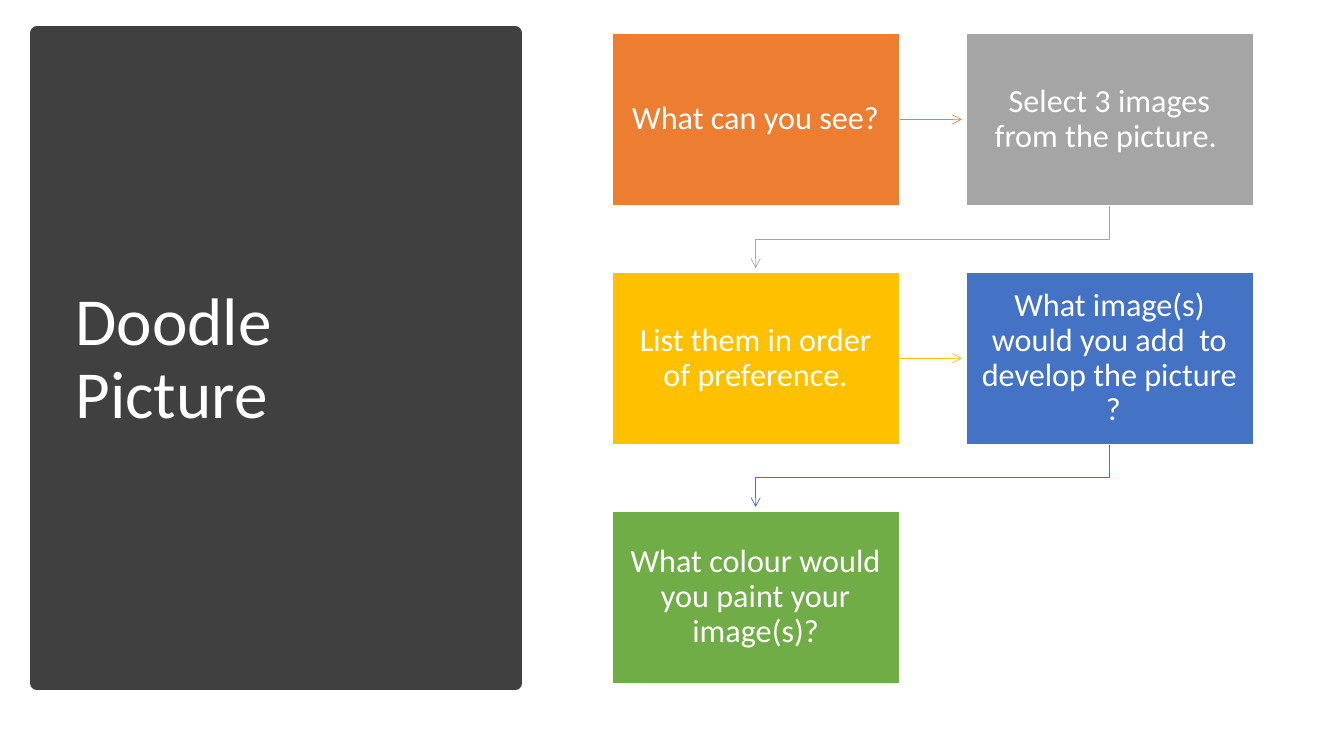
from lxml import etree
from pptx import Presentation
from pptx.dml.color import RGBColor
from pptx.enum import shapes, text
from pptx.oxml.ns import qn
from pptx.util import Inches, Pt

WHITE = RGBColor(0xFF, 0xFF, 0xFF)
DARK = RGBColor(0x40, 0x40, 0x40)
ORANGE = RGBColor(0xED, 0x7D, 0x31)
GREY = RGBColor(0xA5, 0xA5, 0xA5)
GOLD = RGBColor(0xFF, 0xC0, 0x00)
BLUE = RGBColor(0x44, 0x72, 0xC4)
GREEN = RGBColor(0x70, 0xAD, 0x47)

LEFT, TOP = 6.07, 0.33
WIDE, HIGH = 2.85, 1.71
STEP_X, STEP_Y = 3.51, 2.37
REACH = 0.62

STEPS = [
    ("What can you see?", ORANGE),
    ("Select 3 images from the picture. ", GREY),
    ("List them in order of preference.", GOLD),
    ("What image(s) would you add  to develop the picture  ?", BLUE),
    ("What colour would you paint your image(s)?", GREEN),
]


class Deck:
    font = "Calibri"

    def __init__(self):
        self.show = Presentation()
        self.show.slide_width = Inches(13.33)
        self.show.slide_height = Inches(7.5)
        self.slide = self.show.slides.add_slide(self.show.slide_layouts[6])
        self.items = self.slide.shapes

    def label(self, shape, words, size, align, insets):
        frame = shape.text_frame
        frame.word_wrap = True
        frame.vertical_anchor = text.MSO_ANCHOR.MIDDLE
        frame.margin_left, frame.margin_top, frame.margin_right, frame.margin_bottom = map(Inches, insets)
        para = frame.paragraphs[0]
        para.text = words
        para.alignment = align
        para.line_spacing = 0.9
        para.font.name = self.font
        para.font.size = Pt(size)
        para.font.color.rgb = WHITE

    def panel(self, x, y, w, h, fill, edge):
        shape = self.items.add_shape(shapes.MSO_SHAPE.RECTANGLE, *map(Inches, (x, y, w, h)))
        shape.shadow.inherit = False
        shape.fill.solid()
        shape.fill.fore_color.rgb = fill
        shape.line.color.rgb, shape.line.width = edge
        return shape

    def title(self, x, y, w, h, words):
        box = self.items.add_textbox(*map(Inches, (x, y, w, h)))
        self.label(box, words, 48, text.PP_ALIGN.LEFT, (0.1, 0.05, 0.4, 0.05))

    def step(self, x, y, words, fill):
        box = self.panel(x, y, WIDE, HIGH, fill, (WHITE, Pt(1)))
        self.label(box, words, 23, text.PP_ALIGN.CENTER, (0.14, 0.15, 0.14, 0.15))

    def arrow(self, shape, color):
        shape.line.color.rgb = color
        shape.line.width = Pt(0.5)
        props = shape._element.spPr
        etree.SubElement(props.find(qn("a:ln")), qn("a:tailEnd"), type="arrow")
        etree.SubElement(props, qn("a:effectLst"))

    def across(self, x, y, color):
        ends = map(Inches, (x, y, x + REACH, y))
        self.arrow(self.items.add_connector(shapes.MSO_CONNECTOR.STRAIGHT, *ends), color)

    def down(self, x, y, color):
        bend = y + 0.33
        back = x - STEP_X
        route = [(x, bend), (back, bend), (back, y + REACH)]
        form = self.items.build_freeform(Inches(x), Inches(y))
        form.add_line_segments([(Inches(a), Inches(b)) for a, b in route], close=False)
        shape = form.convert_to_shape()
        shape.fill.background()
        self.arrow(shape, color)


def main():
    deck = Deck()
    deck.panel(0.37, 0.33, 4.74, 6.45, DARK, (DARK, Pt(10)))
    deck.title(0.65, 0.7, 4.16, 5.75, "Doodle Picture")
    for i, (words, color) in enumerate(STEPS):
        row, col = divmod(i, 2)
        x, y = LEFT + col * STEP_X, TOP + row * STEP_Y
        if i < len(STEPS) - 1:
            if col == 0:
                deck.across(x + WIDE, y + HIGH / 2, color)
            else:
                deck.down(x + WIDE / 2, y + HIGH, color)
        deck.step(x, y, words, color)
    deck.show.save("out.pptx")


if __name__ == "__main__":
    main()
